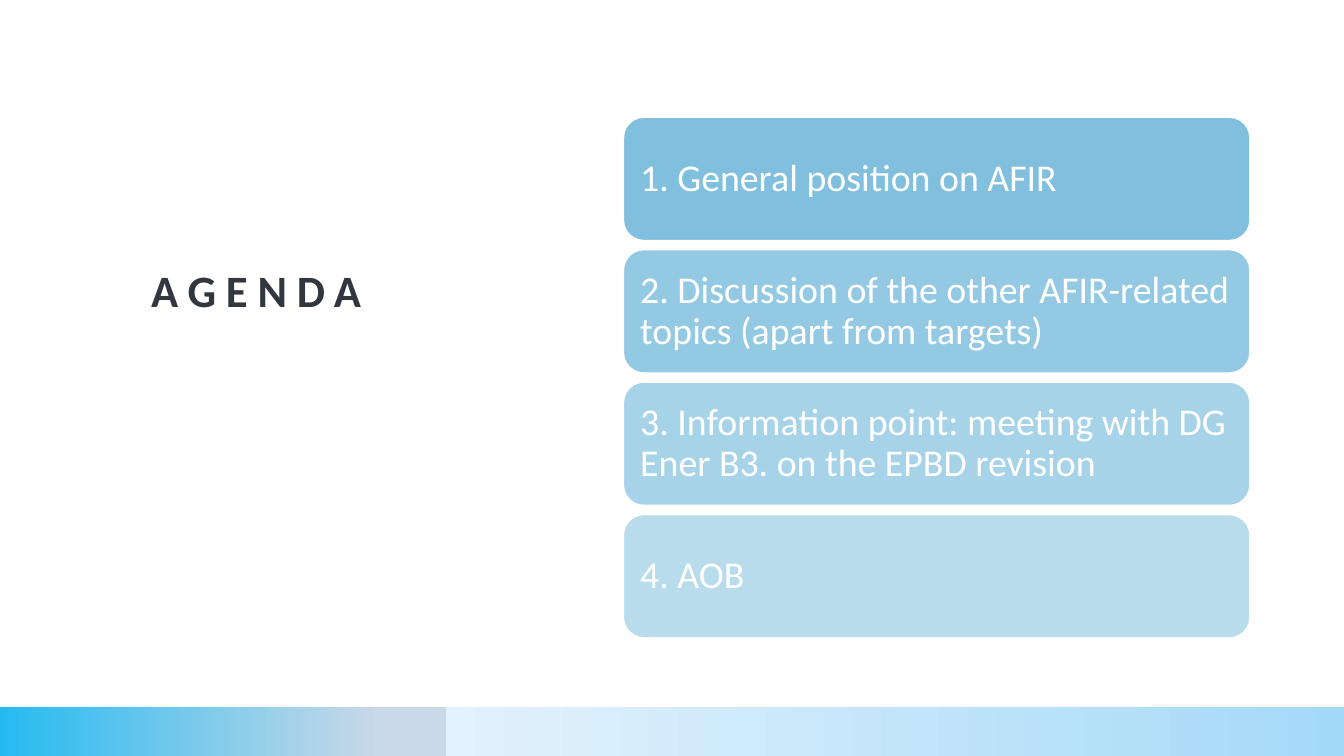
from dataclasses import dataclass

from lxml.etree import SubElement
from pptx import Presentation
from pptx.dml.color import RGBColor
from pptx.enum.shapes import MSO_SHAPE
from pptx.enum.text import MSO_ANCHOR, MSO_AUTO_SIZE, PP_ALIGN
from pptx.oxml.ns import qn
from pptx.util import Inches, Pt


@dataclass(frozen=True)
class Theme:
    font: str = "Calibri"
    title_size: int = 32
    item_size: int = 27
    title: str = "32363F"
    white: str = "FFFFFF"
    card: str = "73BADB"
    left_band: tuple = (("26BAF1", 0), ("CAD9E7", 0.86))
    right_band: tuple = (("E3F2FC", 0), ("A4D9F8", 1))


THEME = Theme()
AGENDA = (
    "1. General position on AFIR",
    "2. Discussion of the other AFIR-related topics (apart from targets)",
    "3. Information point: meeting with DG Ener B3. on the EPBD revision",
    "4. AOB",
)
CARD_TOP, CARD_PITCH = 1.16, 1.314
FIRST_OPACITY, LAST_OPACITY = 90, 50


def set_attrs(obj, values):
    for name, value in values.items():
        setattr(obj, name, value)


def write_text(tf, text, size, color, anchor, inset, bold=False):
    set_attrs(tf, {
        "word_wrap": True,
        "auto_size": MSO_AUTO_SIZE.NONE,
        "vertical_anchor": anchor,
        **{f"margin_{side}": Inches(inset) for side in ("left", "top", "right", "bottom")},
    })
    p = tf.paragraphs[0]
    p.alignment = PP_ALIGN.LEFT
    p.line_spacing = 0.9
    r = p.add_run()
    r.text = text
    set_attrs(r.font, {"name": THEME.font, "size": Pt(size), "bold": bold})
    r.font.color.rgb = RGBColor.from_string(color)
    return r


def add_title(s, text):
    title = s.shapes.title
    set_attrs(title, {"left": Inches(1.5), "top": Inches(1.08),
                      "width": Inches(4.3), "height": Inches(2.07)})
    r = write_text(title.text_frame, text, THEME.title_size, THEME.title,
                   MSO_ANCHOR.BOTTOM, 0, bold=True)
    r.font._element.set("spc", "700")


def add_band(s, left, width, stops):
    """Add a footer band whose colour runs from left to right."""
    band = s.shapes.add_shape(MSO_SHAPE.RECTANGLE, Inches(left), Inches(7.01),
                              Inches(width), Inches(0.5))
    band.shadow.inherit = False
    band.line.fill.background()
    band.fill.gradient()
    band.fill.gradient_angle = 0
    for stop, (color, position) in zip(band.fill.gradient_stops, stops):
        stop.color.rgb = RGBColor.from_string(color)
        stop.position = position


def set_opacity(shape, percent):
    color = shape._element.spPr.find(qn("a:solidFill"))[0]
    SubElement(color, qn("a:alpha")).set("val", str(round(percent * 1000)))


def add_card(s, top, text, opacity):
    card = s.shapes.add_shape(MSO_SHAPE.ROUNDED_RECTANGLE, Inches(6.18), Inches(top),
                              Inches(6.22), Inches(1.23))
    card.shadow.inherit = False
    card.fill.solid()
    card.fill.fore_color.rgb = RGBColor.from_string(THEME.card)
    set_opacity(card, opacity)
    card.line.color.rgb = RGBColor.from_string(THEME.white)
    card.line.width = Pt(1.5)
    write_text(card.text_frame, text, THEME.item_size, THEME.white,
               MSO_ANCHOR.MIDDLE, 0.11)


def main():
    prs = Presentation()
    set_attrs(prs, {"slide_width": Inches(13.33), "slide_height": Inches(7.5)})
    s = prs.slides.add_slide(prs.slide_layouts[5])
    add_band(s, 0, 4.42, THEME.left_band)
    add_band(s, 4.42, 8.92, THEME.right_band)
    add_title(s, "AGENDA")
    fade = (FIRST_OPACITY - LAST_OPACITY) / (len(AGENDA) - 1)
    for i, text in enumerate(AGENDA):
        add_card(s, CARD_TOP + i * CARD_PITCH, text, FIRST_OPACITY - i * fade)
    prs.save("out.pptx")


if __name__ == "__main__":
    main()
